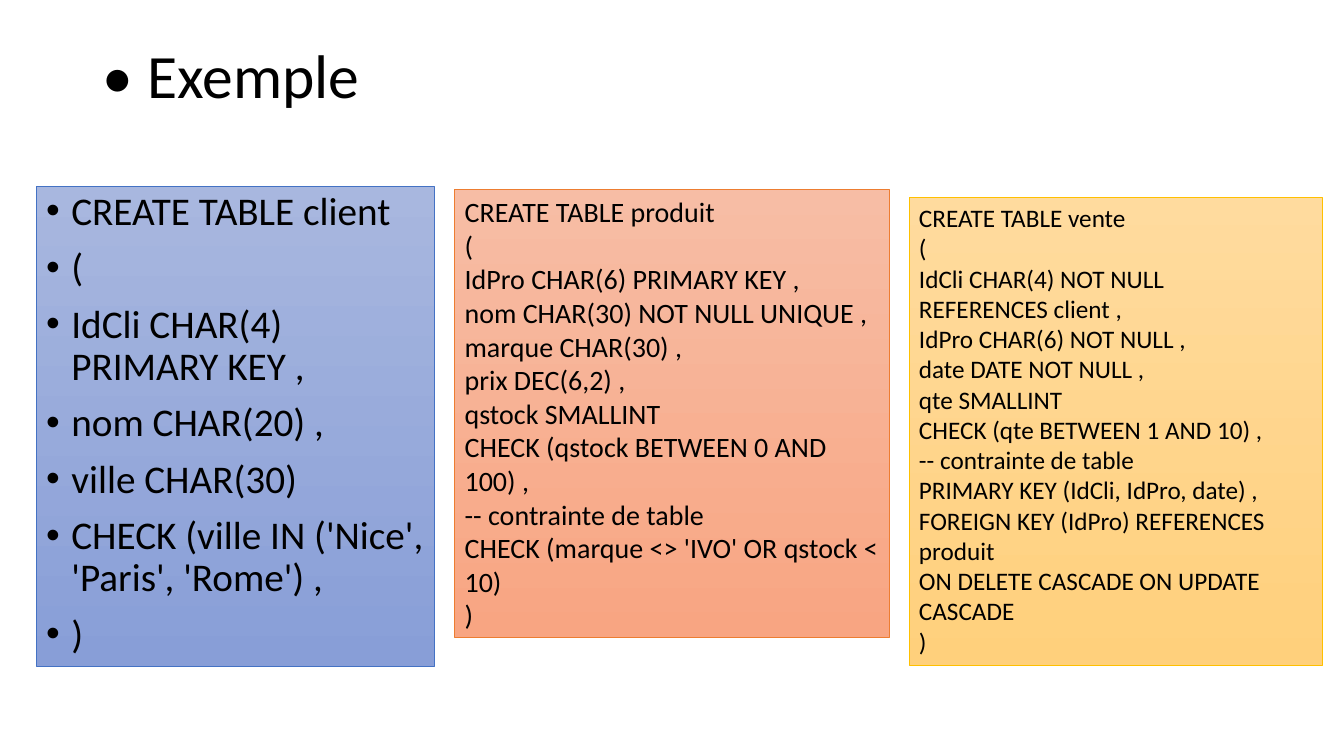
from pptx import Presentation
from pptx.dml.color import RGBColor
from pptx.enum.text import MSO_ANCHOR, MSO_AUTO_SIZE, PP_ALIGN
from pptx.util import Cm, Pt

# Content
TITLE = "• Exemple"
CLIENT = [
    "CREATE TABLE client",
    "(",
    "IdCli CHAR(4) PRIMARY KEY ,",
    "nom CHAR(20) ,",
    "ville CHAR(30)",
    "CHECK (ville IN ('Nice', 'Paris', 'Rome') ,",
    ")",
]
PRODUIT = [
    "CREATE TABLE produit",
    "(",
    "IdPro CHAR(6) PRIMARY KEY ,",
    "nom CHAR(30) NOT NULL UNIQUE ,",
    "marque CHAR(30) ,",
    "prix DEC(6,2) ,",
    "qstock SMALLINT",
    "CHECK (qstock BETWEEN 0 AND 100) ,",
    "-- contrainte de table",
    "CHECK (marque <> 'IVO' OR qstock < 10)",
    ")",
]
VENTE = [
    "CREATE TABLE vente",
    "(",
    "IdCli CHAR(4) NOT NULL",
    "REFERENCES client ,",
    "IdPro CHAR(6) NOT NULL ,",
    "date DATE NOT NULL ,",
    "qte SMALLINT",
    "CHECK (qte BETWEEN 1 AND 10) ,",
    "-- contrainte de table",
    "PRIMARY KEY (IdCli, IdPro, date) ,",
    "FOREIGN KEY (IdPro) REFERENCES produit",
    "ON DELETE CASCADE ON UPDATE CASCADE",
    ")",
]

# Layout in cm: left, top, width, height
TITLE_BOX = (2.34, 1.02, 29.21, 3.68)
CLIENT_BOX = (0.91, 4.7, 10.03, 12.09)
PRODUIT_BOX = (11.46, 4.78, 10.95, 11.28)
VENTE_BOX = (22.91, 4.98, 10.41, 11.79)

# Gradient top, gradient bottom, outline
BLUE = ("A8B7DF", "889ED7", "4472C4")
ORANGE = ("F7BDA5", "F8A582", "ED7D31")
GOLD = ("FFDB9E", "FFD07C", "FFC000")

# Paragraph formats
TIGHT = {"alignment": PP_ALIGN.LEFT, "line_spacing": 0.9}
LISTED = {**TIGHT, "space_before": Pt(10)}
PLAIN = {"alignment": PP_ALIGN.LEFT}


def rgb(code):
    return RGBColor.from_string(code)


def place(s, box):
    s.left, s.top, s.width, s.height = map(Cm, box)


def write(s, lines, size, para_format, auto_size=MSO_AUTO_SIZE.NONE):
    tf = s.text_frame
    frame_format = {"word_wrap": True, "auto_size": auto_size,
                    "vertical_anchor": MSO_ANCHOR.TOP}
    for name, value in frame_format.items():
        setattr(tf, name, value)
    for i, line in enumerate(lines):
        p = tf.add_paragraph() if i else tf.paragraphs[0]
        for name, value in para_format.items():
            setattr(p, name, value)
        r = p.add_run()
        r.text = line
        for name, value in {"name": "Calibri", "size": Pt(size)}.items():
            setattr(r.font, name, value)
        r.font.color.rgb = rgb("000000")


def paint(s, colours):
    s.fill.gradient()
    s.fill.gradient_angle = 270
    for stop, code in zip(s.fill.gradient_stops, colours):
        stop.color.rgb = rgb(code)
    s.line.color.rgb = rgb(colours[2])
    s.line.width = Pt(0.5)


prs = Presentation()
prs.slide_width, prs.slide_height = Cm(33.87), Cm(19.05)
slide = prs.slides.add_slide(prs.slide_layouts[1])

# Title
title = slide.shapes.title
place(title, TITLE_BOX)
write(title, [TITLE], 44, TIGHT)

# Client table as the bulleted list
body = slide.placeholders[1]
place(body, CLIENT_BOX)
write(body, CLIENT, 28, LISTED)
paint(body, BLUE)
for p in body.text_frame.paragraphs:
    pPr = p._p.get_or_add_pPr()
    pPr.set("marL", str(Cm(0.635)))
    pPr.set("indent", str(-Cm(0.635)))

# Product and sale tables as plain panels
for lines, box, size, colours in [(VENTE, VENTE_BOX, 18, GOLD),
                                  (PRODUIT, PRODUIT_BOX, 20, ORANGE)]:
    panel = slide.shapes.add_textbox(*map(Cm, box))
    write(panel, lines, size, PLAIN, MSO_AUTO_SIZE.SHAPE_TO_FIT_TEXT)
    paint(panel, colours)

prs.save("out.pptx")
